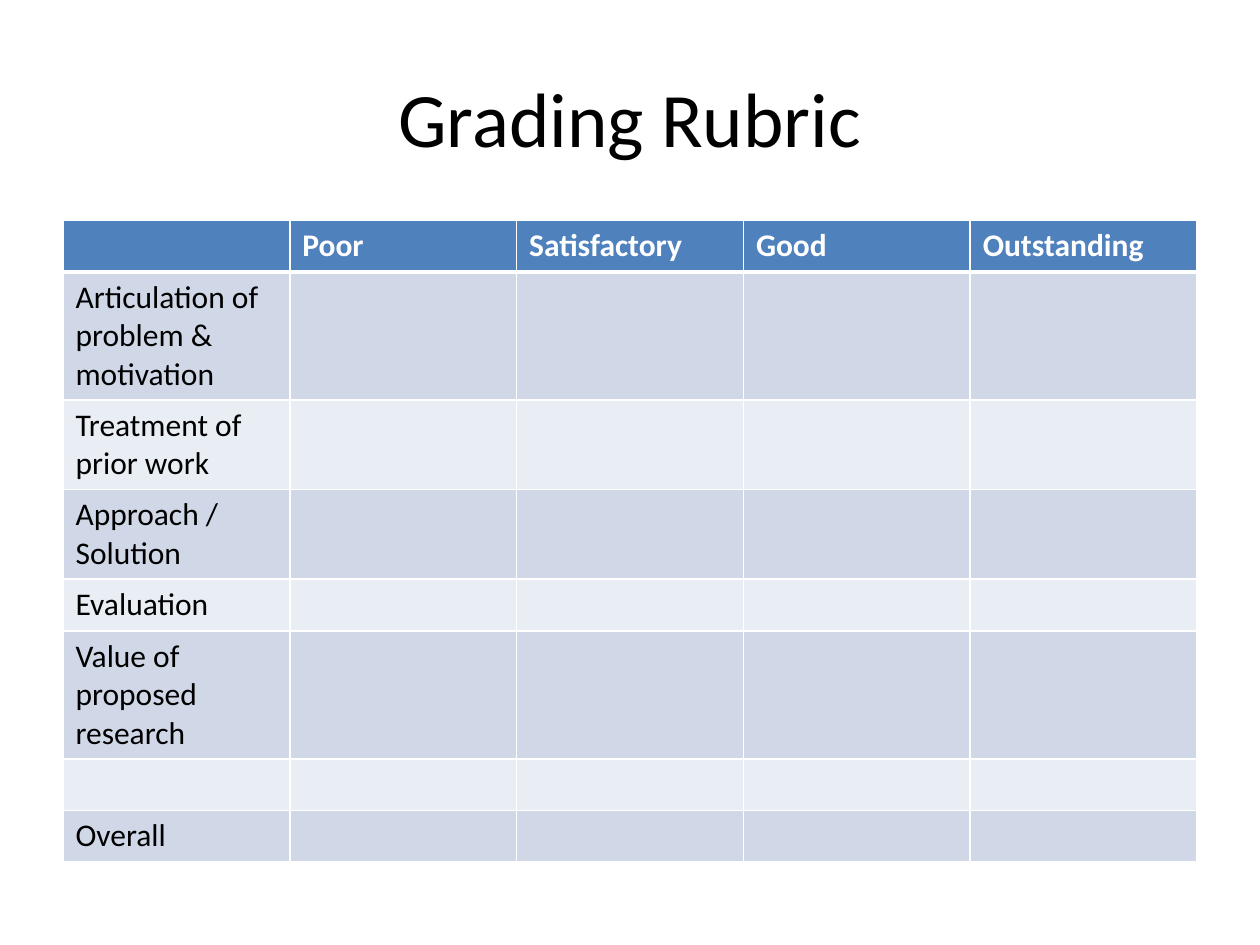
from dataclasses import dataclass

from lxml.etree import SubElement
from pptx import Presentation
from pptx.dml.color import RGBColor
from pptx.enum.text import MSO_ANCHOR, PP_ALIGN
from pptx.oxml.ns import qn
from pptx.util import Inches, Pt


@dataclass(frozen=True)
class Theme:
    font: str = "Calibri"
    title_size: int = 44
    table_size: int = 18
    text: str = "000000"
    header_text: str = "FFFFFF"
    header_fill: str = "4F81BD"
    band_fills: tuple = ("D0D8E8", "E9EDF4")
    border: str = "FFFFFF"
    border_width: int = 1
    header_rule_width: int = 3


THEME = Theme()
GRADES = ["Poor", "Satisfactory", "Good", "Outstanding"]
CRITERIA = [
    "Articulation of problem & motivation",
    "Treatment of prior work",
    "Approach / Solution",
    "Evaluation",
    "Value of proposed research",
    "",
    "Overall",
]


def format_font(font, size, color, bold=False):
    font.name = THEME.font
    font.size = Pt(size)
    font.bold = bold
    font.color.rgb = RGBColor.from_string(color)


def set_borders(cell, top, bottom):
    """Draw the four cell borders; top and bottom are widths in points."""
    properties = cell._tc.get_or_add_tcPr()
    side = THEME.border_width
    for tag, width in (("lnL", side), ("lnR", side), ("lnT", top), ("lnB", bottom)):
        line = SubElement(properties, qn(f"a:{tag}"), w=str(Pt(width)))
        fill = SubElement(line, qn("a:solidFill"))
        SubElement(fill, qn("a:srgbClr"), val=THEME.border)


def add_title(slide, text, left, top, width, height):
    title = slide.shapes.title
    title.left, title.top, title.width, title.height = left, top, width, height
    title.text_frame.text = text
    title.text_frame.vertical_anchor = MSO_ANCHOR.MIDDLE
    paragraph = title.text_frame.paragraphs[0]
    paragraph.alignment = PP_ALIGN.CENTER
    format_font(paragraph.runs[0].font, THEME.title_size, THEME.text)


def format_cell(cell, text, row):
    is_header = row == 0
    thin, thick = THEME.border_width, THEME.header_rule_width
    set_borders(cell, thick if row == 1 else thin, thick if is_header else thin)
    fill = THEME.header_fill if is_header else THEME.band_fills[(row - 1) % 2]
    cell.fill.solid()
    cell.fill.fore_color.rgb = RGBColor.from_string(fill)
    cell.text_frame.text = text
    color = THEME.header_text if is_header else THEME.text
    paragraph = cell.text_frame.paragraphs[0]
    for run in paragraph.runs:
        format_font(run.font, THEME.table_size, color, is_header)


def add_rubric(slide, left, top, width, row_height):
    """Add the grid of criteria by grades; rows grow to fit their labels."""
    rows = [["", *GRADES]] + [[name] + [""] * len(GRADES) for name in CRITERIA]
    table = slide.shapes.add_table(
        len(rows), len(rows[0]), left, top, width, row_height * len(rows)
    ).table
    for row, texts in enumerate(rows):
        for column, text in enumerate(texts):
            format_cell(table.cell(row, column), text, row)


def main():
    presentation = Presentation()
    presentation.slide_width = Inches(10)
    presentation.slide_height = Inches(7.5)
    title_only = presentation.slide_layouts[5]
    slide = presentation.slides.add_slide(title_only)
    left, width = Inches(0.5), Inches(9)
    add_title(slide, "Grading Rubric", left, Inches(0.3), width, Inches(1.25))
    add_rubric(slide, left, Inches(1.75), width, Inches(0.41))
    presentation.save("out.pptx")


if __name__ == "__main__":
    main()
